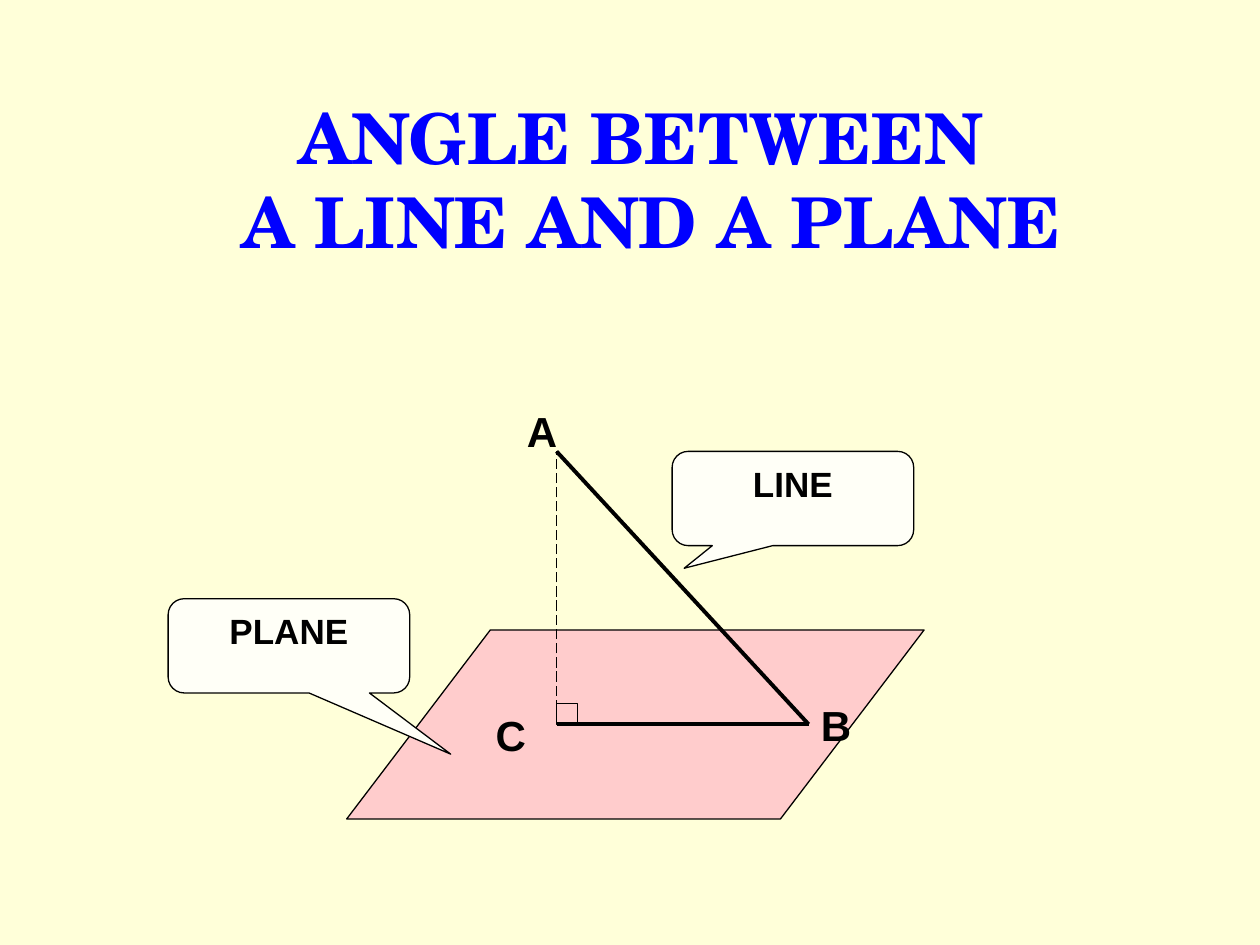
from dataclasses import dataclass

import pptx
import pptx.dml.color
import pptx.enum.dml
import pptx.enum.shapes
import pptx.enum.text
import pptx.oxml.ns
import pptx.util
from lxml import etree
from pptx.dml.color import RGBColor
from pptx.enum.shapes import MSO_SHAPE
from pptx.util import Cm

CREAM = RGBColor(0xFF, 0xFF, 0xD9)
IVORY = RGBColor(0xFF, 0xFF, 0xF7)
PINK = RGBColor(0xFF, 0xCC, 0xCC)
BLUE = RGBColor(0x00, 0x00, 0xFF)
BLACK = RGBColor(0x00, 0x00, 0x00)
CENTER = pptx.enum.text.PP_ALIGN.CENTER
LEFT = pptx.enum.text.PP_ALIGN.LEFT


@dataclass
class Vertex:
    name: str
    x: float
    y: float
    label_left: float
    label_top: float


@dataclass
class Callout:
    word: str
    left: float
    top: float
    tip: tuple[float, float]


# Lengths in centimetres
VERTEX_A = Vertex("A", 11.22, 9.1, 10.37, 8.05)
VERTEX_B = Vertex("B", 16.3, 14.6, 16.3, 13.97)
VERTEX_C = Vertex("C", 11.22, 14.6, 9.74, 14.18)
CALLOUTS = [
    Callout("LINE", 13.55, 9.1, (-0.45, 0.74)),
    Callout("PLANE", 3.39, 12.07, (0.67, 1.15)),
]
CORNER = 0.42


def add_span(para, text: str, size: float, font: str, color: RGBColor) -> None:
    span = para.add_run()
    span.text = text
    span.font.size = pptx.util.Pt(size)
    span.font.name = font
    span.font.bold = True
    span.font.color.rgb = color


def add_figure(page, kind, left: float, top: float, width: float, height: float,
               fill: RGBColor | None = None, adjustments: tuple = ()):
    figure = page.shapes.add_shape(kind, Cm(left), Cm(top), Cm(width), Cm(height))
    figure.shadow.inherit = False
    for index, value in enumerate(adjustments):
        figure.adjustments[index] = value
    if fill is None:
        figure.fill.background()
    else:
        figure.fill.solid()
        figure.fill.fore_color.rgb = fill
    figure.line.color.rgb = BLACK
    figure.line.width = pptx.util.Pt(0.75)
    return figure


def add_edge(page, start: Vertex, end: Vertex, width: float, dashed: bool = False) -> None:
    edge = page.shapes.add_connector(
        pptx.enum.shapes.MSO_CONNECTOR.STRAIGHT,
        Cm(start.x), Cm(start.y), Cm(end.x), Cm(end.y))
    edge.line.color.rgb = BLACK
    edge.line.width = pptx.util.Pt(width)
    if dashed:
        edge.line.dash_style = pptx.enum.dml.MSO_LINE.LONG_DASH
    etree.SubElement(edge._element.spPr, pptx.oxml.ns.qn("a:effectLst"))


def add_label(page, vertex: Vertex) -> None:
    box = page.shapes.add_textbox(
        Cm(vertex.label_left), Cm(vertex.label_top), Cm(1.27), Cm(1.27))
    box.text_frame.word_wrap = True
    para = box.text_frame.paragraphs[0]
    para.alignment = LEFT
    add_span(para, vertex.name, 24, "Arial", BLACK)


def add_callout(page, callout: Callout) -> None:
    bubble = add_figure(page, MSO_SHAPE.ROUNDED_RECTANGULAR_CALLOUT,
                        callout.left, callout.top, 4.87, 1.9, IVORY,
                        (*callout.tip, 0.17))
    bubble.text_frame.word_wrap = True
    bubble.text_frame.vertical_anchor = pptx.enum.text.MSO_ANCHOR.TOP
    para = bubble.text_frame.paragraphs[0]
    para.alignment = CENTER
    add_span(para, callout.word, 20, "Arial", BLACK)


def add_title(page) -> None:
    box = page.shapes.add_textbox(Cm(4.02), Cm(1.69), Cm(18.2), Cm(3.81))
    box.text_frame.word_wrap = True
    box.text_frame.vertical_anchor = pptx.enum.text.MSO_ANCHOR.MIDDLE
    para = box.text_frame.paragraphs[0]
    para.alignment = CENTER
    add_span(para, "ANGLE BETWEEN ", 40, "TeX Gyre Schola", BLUE)
    para.add_line_break()
    add_span(para, "A LINE AND A PLANE", 40, "TeX Gyre Schola", BLUE)


def main() -> None:
    deck = pptx.Presentation()
    deck.slide_width, deck.slide_height = Cm(25.4), Cm(19.05)
    page = deck.slides.add_slide(deck.slide_layouts[6])
    page.background.fill.solid()
    page.background.fill.fore_color.rgb = CREAM

    add_title(page)

    # Plane and the triangle standing on it
    add_figure(page, MSO_SHAPE.PARALLELOGRAM, 6.99, 12.7, 11.64, 3.81, PINK, (0.76,))
    add_edge(page, VERTEX_C, VERTEX_A, 0.75, dashed=True)
    add_edge(page, VERTEX_C, VERTEX_B, 2.25)
    add_edge(page, VERTEX_B, VERTEX_A, 2.25)
    for vertex in (VERTEX_A, VERTEX_B, VERTEX_C):
        add_label(page, vertex)

    # Right-angle mark at the foot of the perpendicular
    add_figure(page, MSO_SHAPE.RECTANGLE,
               VERTEX_C.x, VERTEX_C.y - CORNER, CORNER, CORNER)

    # Callouts
    for callout in CALLOUTS:
        add_callout(page, callout)

    deck.save("out.pptx")


if __name__ == "__main__":
    main()
